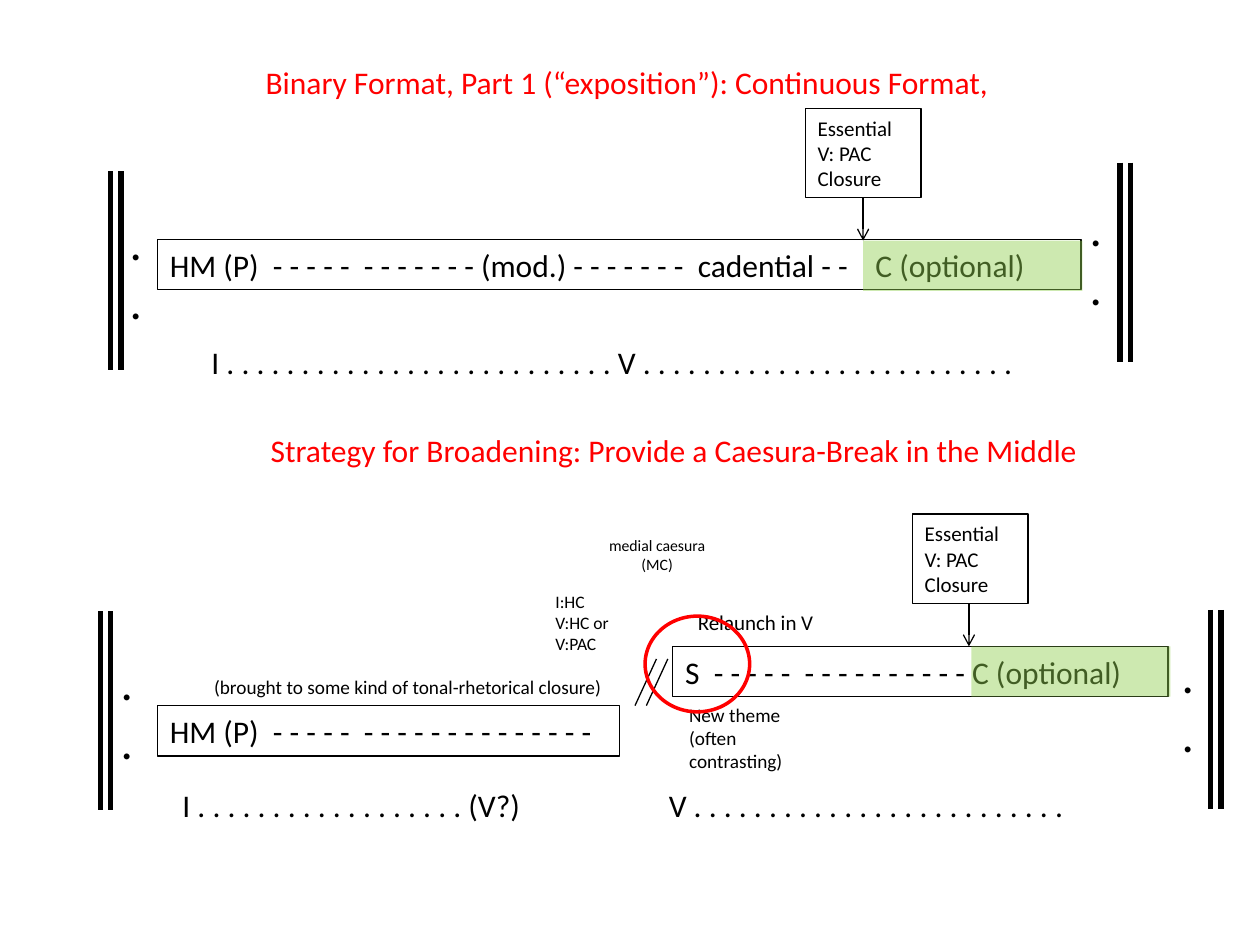
from pptx import Presentation
from pptx.dml.color import RGBColor
from pptx.enum.shapes import MSO_CONNECTOR, MSO_SHAPE
from pptx.enum.text import PP_ALIGN
from pptx.oxml.ns import qn
from pptx.util import Inches, Pt
from lxml import etree

RECTANGLE, OVAL = MSO_SHAPE.RECTANGLE, MSO_SHAPE.OVAL
STRAIGHT = MSO_CONNECTOR.STRAIGHT
LEFT, CENTER = PP_ALIGN.LEFT, PP_ALIGN.CENTER
COLORS = {"ink": "000000", "red": "FF0000", "green": "92D050"}

deck = Presentation()
deck.slide_width, deck.slide_height = Inches(10), Inches(7.5)
page = deck.slides.add_slide(deck.slide_layouts[6])

# Grid of 100 columns by 75 rows
COLUMN = deck.slide_width / 100
ROW = deck.slide_height / 75


def add_text(left, top, width, height, lines, size, color="ink",
             framed=False, align=LEFT, tab=None):
    """Add lines of text, in a thin frame if asked; tab is in columns."""
    place = [round(n) for n in (left * COLUMN, top * ROW, width * COLUMN, height * ROW)]
    if framed:
        box = page.shapes.add_shape(RECTANGLE, *place)
        box.shadow.inherit = False
        box.fill.background()
        box.line.color.rgb = RGBColor.from_string(COLORS["ink"])
        box.line.width = Pt(0.75)
    else:
        box = page.shapes.add_textbox(*place)
    frame = box.text_frame
    frame.word_wrap = True
    frame.text = "\n".join(lines)
    for para in frame.paragraphs:
        para.alignment = align
        if tab:
            stops = etree.SubElement(para._p.get_or_add_pPr(), qn("a:tabLst"))
            etree.SubElement(stops, qn("a:tab"), pos=str(round(tab * COLUMN)), algn="l")
        para.font.name, para.font.size = "Calibri", Pt(size)
        para.font.color.rgb = RGBColor.from_string(COLORS[color])


def add_line(x1, y1, x2, y2, weight=0.75, arrow=False):
    """Add a straight black line, with an open arrowhead at its end if asked."""
    line = page.shapes.add_connector(
        STRAIGHT, round(x1 * COLUMN), round(y1 * ROW), round(x2 * COLUMN), round(y2 * ROW))
    line.line.color.rgb = RGBColor.from_string(COLORS["ink"])
    line.line.width = Pt(weight)
    if arrow:
        etree.SubElement(line.line._get_or_add_ln(), qn("a:tailEnd"), type="arrow")
    etree.SubElement(line._element.spPr, qn("a:effectLst"))


# Theme bars
add_text(12.5, 19, 73.3, 4,
         ["HM (P)  - - - - -  - - - - - - - (mod.) - - - - - - -  cadential - -\tC (optional)"],
         18, framed=True, tab=56)
add_text(12.5, 56, 36.7, 4, ["HM (P)  - - - - -  - - - - - - - - - - - - - -"], 18, framed=True)
add_text(53.4, 51.3, 39.3, 4, ["S  - - - - -  - - - - - - - - - - C (optional)"], 18, framed=True)

# Titles
add_text(20.1, 4.5, 60.6, 4,
         ["Binary Format, Part 1 (“exposition”): Continuous Format,"], 18, "red")
add_text(20.5, 33.7, 70, 4,
         ["Strategy for Broadening: Provide a Caesura-Break in the Middle"], 18, "red")

# Key areas under the bars
long_dots = " ".join("." * 25)
add_text(15.8, 26.7, 69.2, 4, [f"I {' '.join('.' * 26)} V {long_dots}"], 18)
add_text(13.5, 61.9, 79.6, 4, [f"I {' '.join('.' * 18)} (V?)\tV {long_dots}"], 18, tab=38.6)

# Closure boxes with their arrows
for left, top, arrow_x in ((63.9, 8.6, 68.5), (72.4, 40.8, 76.9)):
    add_text(left, top, 9.2, 7.1, ["Essential", "V: PAC Closure"], 12, framed=True)
    add_line(arrow_x, top + 7.1, arrow_x, top + 10.5, arrow=True)

# Caesura strokes
for x in (52.1, 53):
    add_line(x, 52.3, x - 1.7, 56)

# Notes
add_text(54.4, 47.9, 11.7, 3, ["Relaunch in V"], 12)
add_text(53.7, 55.3, 10.9, 6.6, ["New theme", "(often contrasting)"], 11)
add_text(43.1, 46.4, 7.4, 6.1, ["I:HC", "V:HC or", "V:PAC"], 10)
add_text(16, 53.1, 33.2, 2.9, ["(brought to some kind of tonal-rhetorical closure)"], 11)
add_text(47.1, 42, 10.1, 4, ["medial caesura", "(MC)"], 9, align=CENTER)

# Repeat signs: double bar and two dots
for bar_x, bar_top, dots_x, dots_top in (
        (88.9, 12.9, 85.5, 15.2), (96.1, 48.4, 92.8, 50.7),
        (8.8, 13.6, 9.3, 16.3), (8, 48.5, 8.6, 51.2)):
    for x in (bar_x, bar_x + 0.8):
        add_line(x, bar_top, x, bar_top + 15.8, weight=3)
    add_text(dots_x, dots_top, 4.2, 10.4, [".", "."], 28)

# Green veils over the optional codas
for left, top, width in ((77.1, 51.3, 15.8), (68.5, 19.1, 17.4)):
    veil = page.shapes.add_shape(RECTANGLE, round(left * COLUMN), round(top * ROW),
                                 round(width * COLUMN), round(4 * ROW))
    veil.shadow.inherit = False
    veil.fill.solid()
    veil.fill.fore_color.rgb = RGBColor.from_string(COLORS["green"])
    tint = veil._element.spPr.find(qn("a:solidFill")).find(qn("a:srgbClr"))
    etree.SubElement(tint, qn("a:alpha"), val="45000")
    veil.line.fill.background()

# Red ring around the relaunch
ring = page.shapes.add_shape(OVAL, round(51.2 * COLUMN), round(48.9 * ROW),
                             round(8.3 * COLUMN), round(7.6 * ROW))
ring.shadow.inherit = False
ring.fill.background()
ring.line.color.rgb = RGBColor.from_string(COLORS["red"])
ring.line.width = Pt(2)

deck.save("out.pptx")
